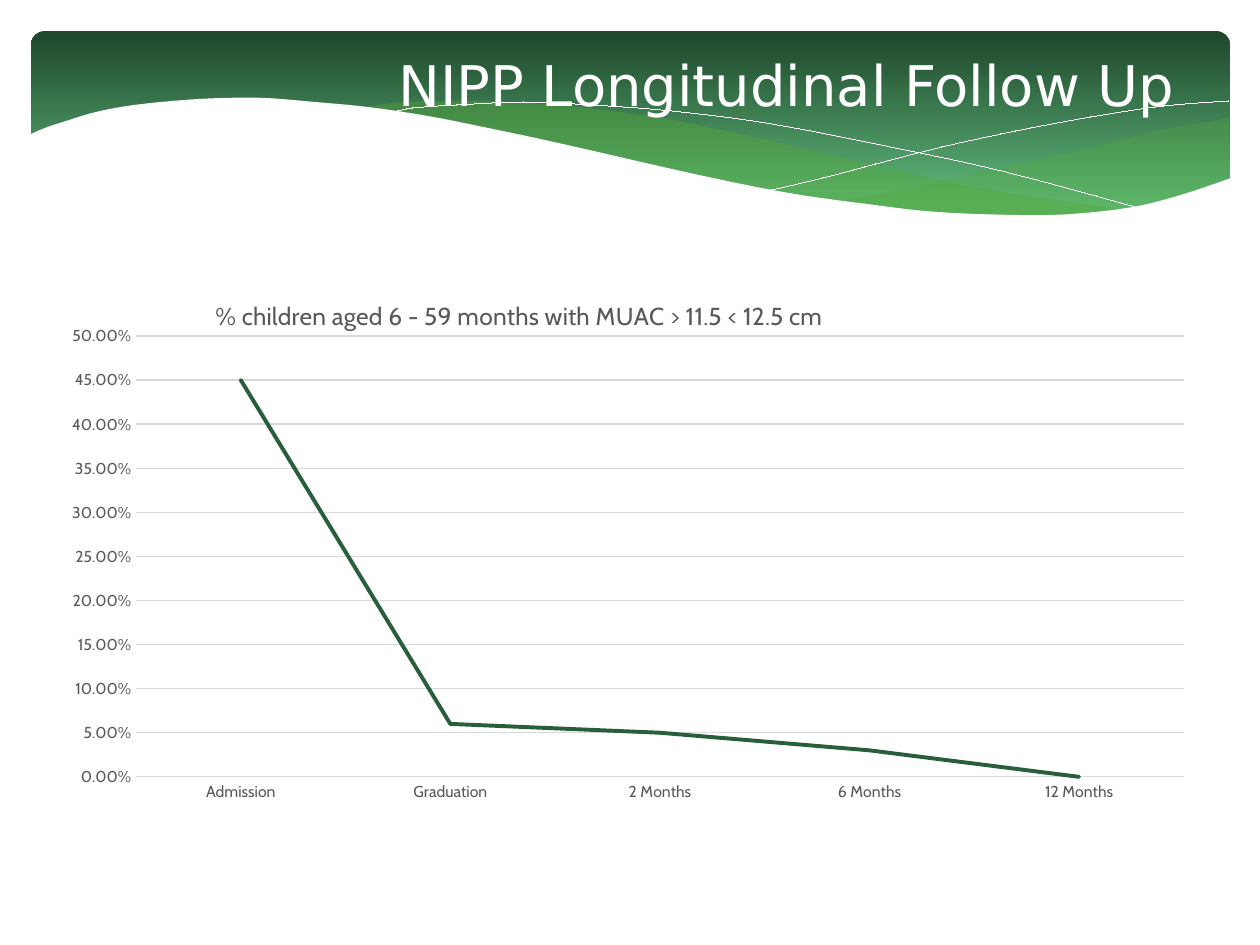
"""Build the NIPP follow-up slide: a wave banner, a title and a line chart."""
from lxml.etree import SubElement
from pptx import Presentation
from pptx.chart.data import CategoryChartData
from pptx.dml.color import RGBColor
from pptx.enum.chart import XL_CHART_TYPE as ChartType, XL_TICK_MARK as TickMark
from pptx.enum.shapes import MSO_SHAPE as Preset
from pptx.enum.text import MSO_ANCHOR as Anchor, PP_ALIGN as Align
from pptx.oxml import parse_xml
from pptx.oxml.ns import nsdecls, qn
from pptx.util import Inches, Pt

SCALE = 7257
WHITE = RGBColor(0xFF, 0xFF, 0xFF)
DARK_GREEN = RGBColor(0x1E, 0x46, 0x2B)
LIGHT_GREEN = RGBColor(0x61, 0xBC, 0x7D)
LEAF_GREEN = RGBColor(0x54, 0xA8, 0x38)
LINE_GREEN = RGBColor(0x28, 0x5E, 0x39)
GRAY = RGBColor(0x59, 0x59, 0x59)
GRID_GRAY = RGBColor(0xD9, 0xD9, 0xD9)


def write_text(frame, text, size, font, color, align=Align.CENTER):
    paragraph = frame.paragraphs[0]
    paragraph.alignment = align
    run = paragraph.add_run()
    run.text = text
    run.font.size = Pt(size)
    run.font.name = font
    run.font.bold = False
    run.font.color.rgb = color


def smooth(points, steps=5):
    """Return points, in EMU, on a Catmull-Rom curve through points in px."""
    padded = [points[0], *points, points[-1]]
    curve = [tuple(n * SCALE for n in points[0])]
    for a, b, c, d in zip(padded, padded[1:], padded[2:], padded[3:]):
        for step in range(1, steps + 1):
            t = step / steps
            curve.append(tuple(
                SCALE * (2 * q + (r - p) * t + (2 * p - 5 * q + 4 * r - s) * t ** 2
                         + (3 * q - p - 3 * r + s) * t ** 3) / 2
                for p, q, r, s in zip(a, b, c, d)))
    return curve


presentation = Presentation()
presentation.slide_width, presentation.slide_height = Inches(10), Inches(7.5)
slide = presentation.slides.add_slide(presentation.slide_layouts[6])
shapes = slide.shapes

banner = shapes.add_shape(
    Preset.ROUNDED_RECTANGLE, *(n * SCALE for n in (31, 31, 1199, 197)))
banner.adjustments[0] = 0.07
banner.shadow.inherit = False
banner.line.fill.background()
banner.fill.gradient()
banner.fill.gradient_angle = 270
for stop, color, position in zip(
        banner.fill.gradient_stops, (DARK_GREEN, LIGHT_GREEN), (0, 0.9)):
    stop.color.rgb = color
    stop.position = position

right_wave = [
    [(1229, 118), (1178, 127), (1123, 139), (1085, 149), (1014, 165),
     (949, 180), (890, 192), (833, 202)],
    [(833, 202), (888, 208), (939, 213), (984, 217), (1038, 217), (1087, 214),
     (1130, 208), (1169, 199), (1196, 192), (1229, 179)],
]
long_wave = [
    [(1125, 210), (1055, 200), (977, 188), (890, 169), (793, 146), (717, 129),
     (648, 116), (586, 108), (529, 103), (479, 101), (433, 101), (394, 103),
     (360, 108)],
    [(360, 108), (407, 113), (456, 122), (509, 134), (566, 146), (668, 170),
     (757, 189), (838, 203), (910, 212), (974, 217), (1031, 218), (1080, 215),
     (1125, 210)],
]
falling_arc = [
    [(389, 113), (413, 108), (457, 105), (524, 102), (591, 105), (672, 111),
     (766, 123), (876, 144), (1002, 171), (1143, 209)],
]
rising_arc = [
    [(772, 190), (823, 178), (876, 164), (942, 147), (1016, 131), (1091, 117),
     (1164, 106), (1229, 101)],
]
white_wave = [
    [(1231, 178), (1184, 194), (1133, 207), (1071, 214), (1019, 215),
     (937, 212), (867, 204), (789, 193), (699, 175), (563, 144), (493, 129),
     (428, 116), (368, 107), (315, 102), (266, 98), (223, 98), (184, 100),
     (134, 105), (96, 112), (66, 121), (45, 128), (29, 135)],
    [(29, 282), (1231, 282)],
]
for edges, fill_color, opacity in (
        (right_wave, LEAF_GREEN, 29), (long_wave, LEAF_GREEN, 40),
        (falling_arc, None, 100), (rising_arc, None, 100),
        (white_wave, WHITE, 100)):
    points = [point for edge in edges for point in smooth(edge)]
    builder = shapes.build_freeform(*points[0])
    builder.add_line_segments(points[1:], close=fill_color is not None)
    wave = builder.convert_to_shape()
    wave.shadow.inherit = False
    if fill_color is None:
        wave.fill.background()
        wave.line.color.rgb = WHITE
        wave.line.width = Pt(0.01)
        continue
    wave.line.fill.background()
    wave.fill.solid()
    wave.fill.fore_color.rgb = fill_color
    if opacity < 100:
        color_element = wave.fill._xPr.find(".//" + qn("a:srgbClr"))
        SubElement(color_element, qn("a:alpha"), val=str(opacity * 1000))

title = shapes.add_textbox(*(n * SCALE for n in (220, -2, 1134, 173)))
title.text_frame.word_wrap = True
title.text_frame.vertical_anchor = Anchor.MIDDLE
write_text(title.text_frame, "NIPP Longitudinal Follow Up",
           size=32, font="DejaVu Sans", color=WHITE)

data = CategoryChartData(number_format="0.00%")
data.categories = ["Admission", "Graduation", "2 Months", "6 Months", "12 Months"]
data.add_series("Series 1", (0.45, 0.06, 0.05, 0.03, 0))
chart_width, chart_height = 1139, 546
chart = shapes.add_chart(
    ChartType.LINE,
    *(n * SCALE for n in (63, 273, chart_width, chart_height)), data).chart
chart.has_legend = False
chart.font.name = "Cabin"
chart.font.size = Pt(10)
chart.has_title = True
write_text(chart.chart_title.text_frame,
           "% children aged 6 - 59 months with MUAC > 11.5 < 12.5 cm",
           size=14, font="Cabin", color=GRAY)
chart.chart_title.include_in_layout = False

category_axis, value_axis = chart.category_axis, chart.value_axis
for axis in (category_axis, value_axis):
    axis.major_tick_mark = axis.minor_tick_mark = TickMark.NONE
    axis.tick_labels.font.name = "Cabin"
    axis.tick_labels.font.size = Pt(9)
    axis.tick_labels.font.color.rgb = GRAY
value_axis.minimum_scale, value_axis.maximum_scale = 0, 0.5
value_axis.major_unit = 0.05
value_axis.tick_labels.number_format = "0.00%"
value_axis.tick_labels.number_format_is_linked = False
value_axis.format.line.fill.background()
for line in (category_axis.format.line, value_axis.major_gridlines.format.line):
    line.color.rgb = GRID_GRAY
    line.width = Pt(0.75)

plot = chart.plots[0]
plot.vary_by_categories = False
series = plot.series[0]
series.smooth = False
series.format.line.color.rgb = LINE_GREEN
series.format.line.width = Pt(2.25)
series.format.line._get_or_add_ln().set("cap", "rnd")

chart_element = chart._chartSpace.chart
for parent, values in (
        (chart_element.find(qn("c:title")),
         {"xMode": "edge", "yMode": "edge",
          "x": 148 / chart_width, "y": 22 / chart_height}),
        (chart_element.plotArea,
         {"layoutTarget": "inner", "xMode": "edge", "yMode": "edge",
          "x": 73 / chart_width, "y": 63 / chart_height,
          "w": 1048 / chart_width, "h": 441 / chart_height})):
    for old_layout in parent.findall(qn("c:layout")):
        parent.remove(old_layout)
    tags = "".join(f'<c:{tag} val="{value}"/>' for tag, value in values.items())
    layout = parse_xml(f'<c:layout {nsdecls("c")}><c:manualLayout>{tags}'
                       '</c:manualLayout></c:layout>')
    parent.insert(1 if parent.tag == qn("c:title") else 0, layout)

presentation.save("out.pptx")
